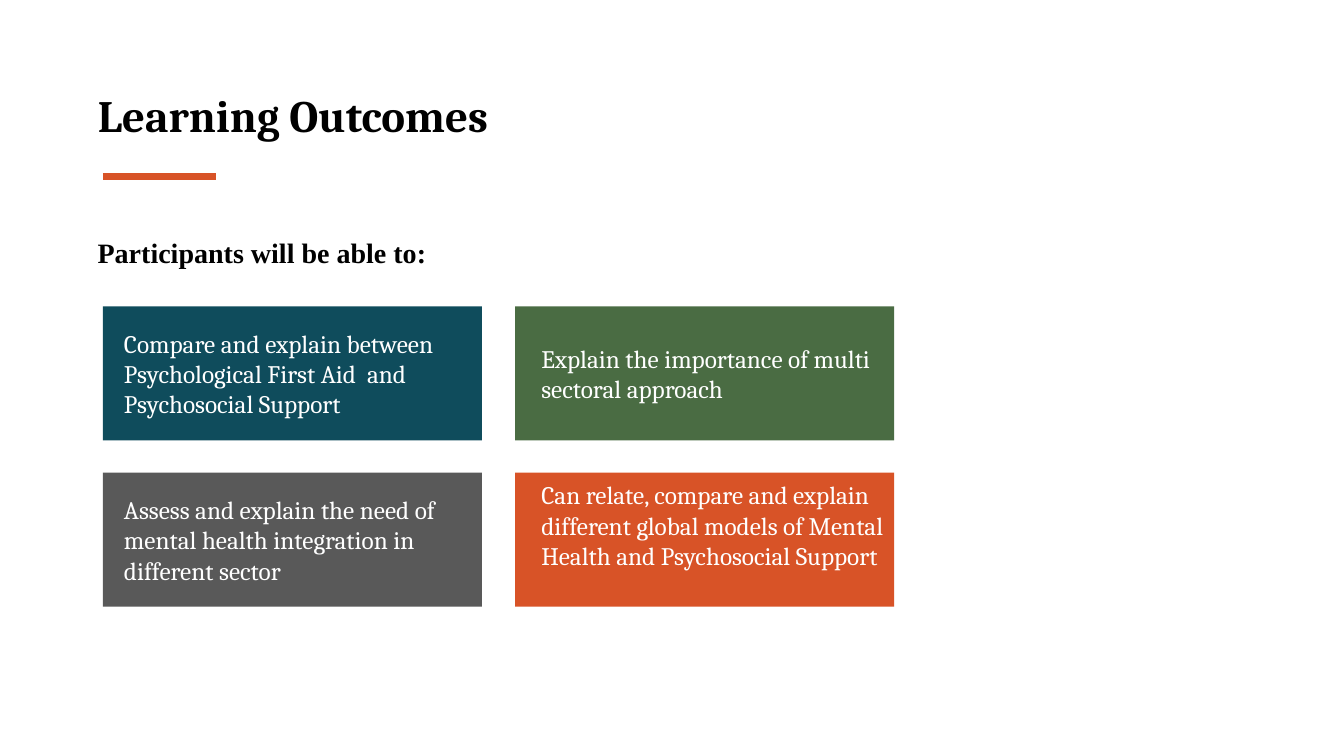
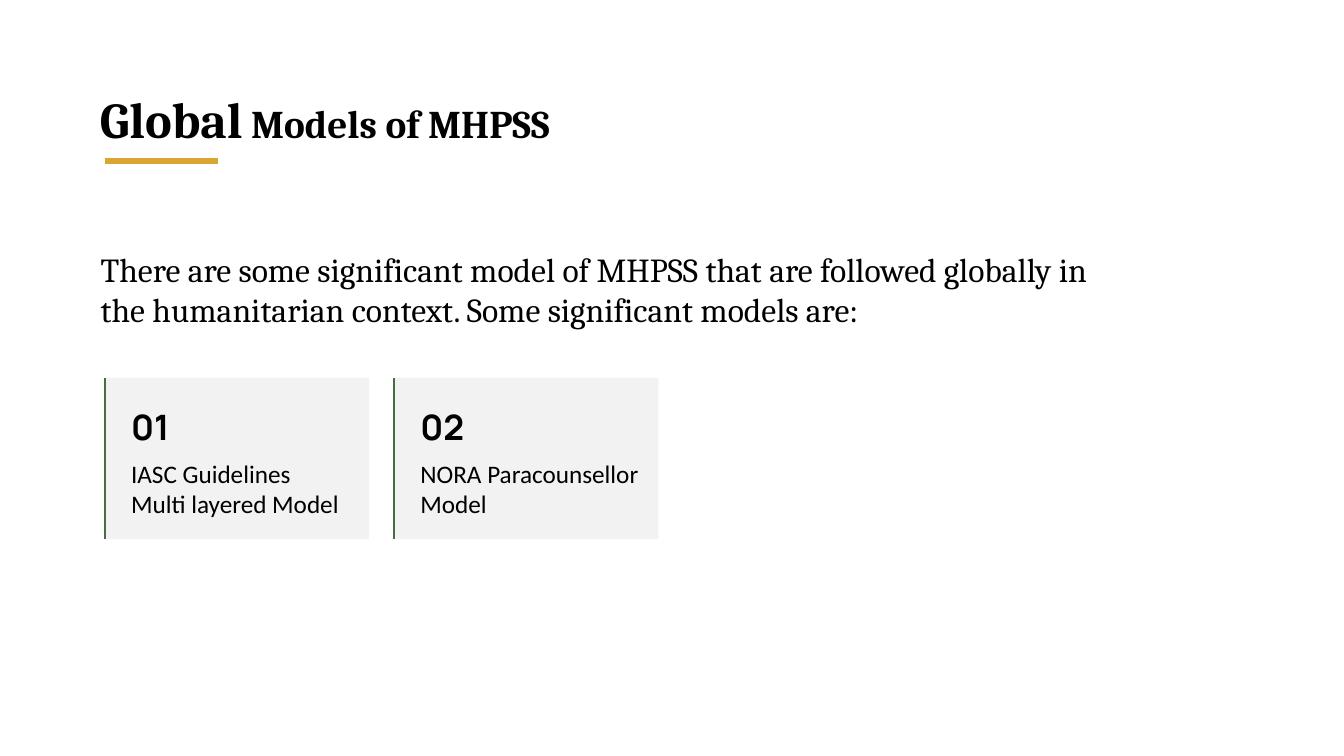
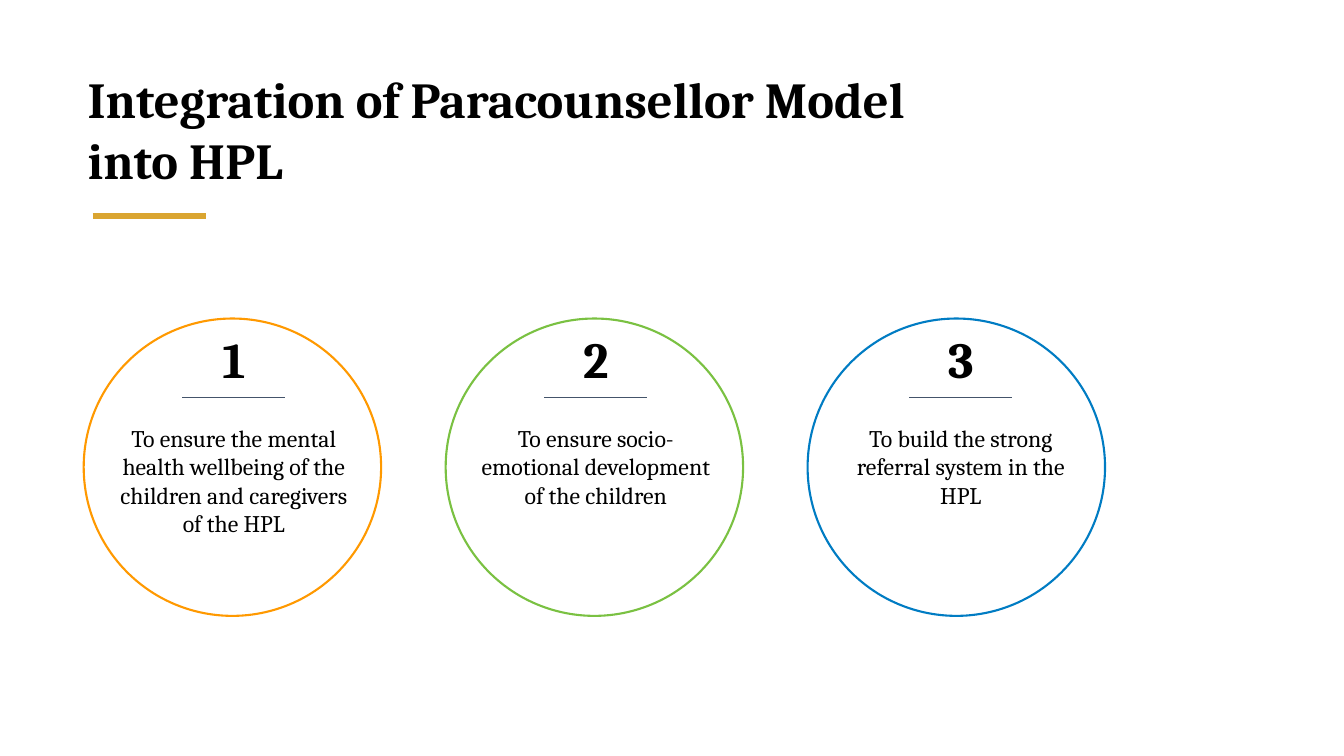
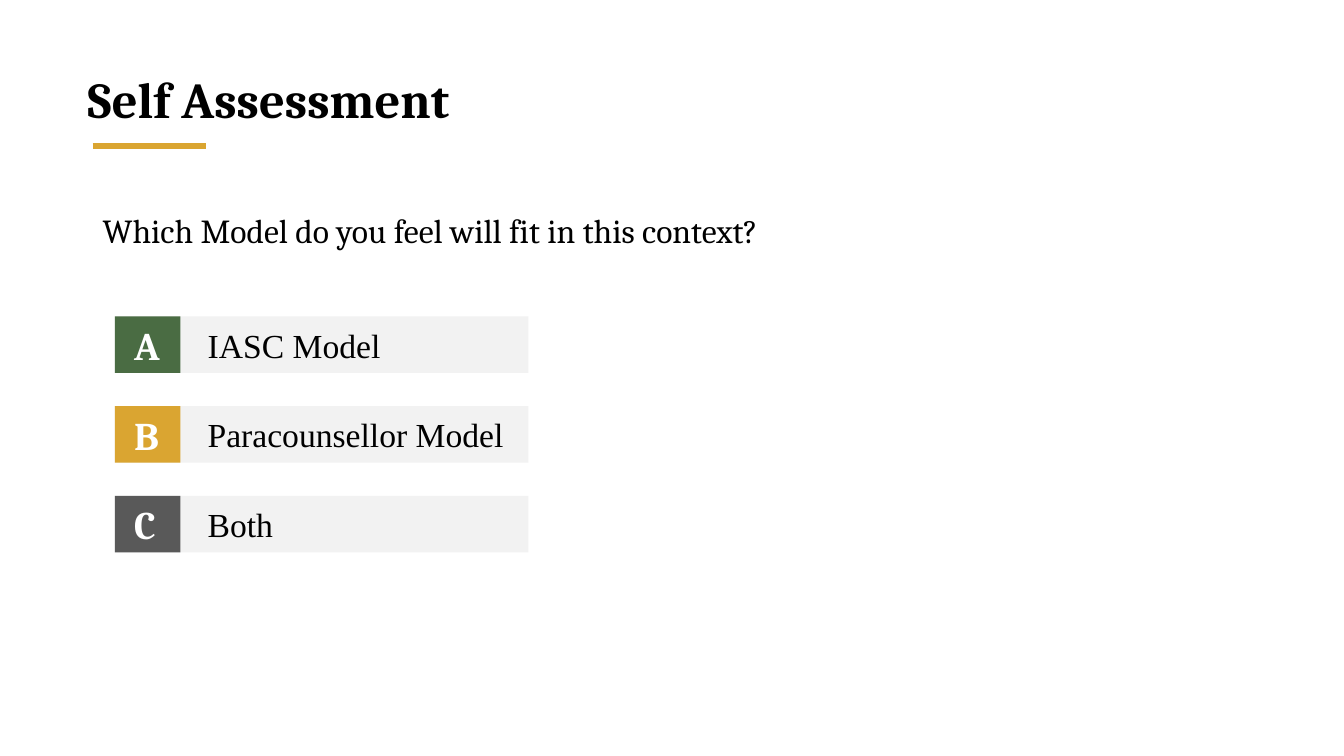
from lxml import etree
from pptx import Presentation
from pptx.dml.color import RGBColor
from pptx.enum.shapes import MSO_CONNECTOR, MSO_SHAPE
from pptx.enum.text import MSO_ANCHOR, MSO_AUTO_SIZE, PP_ALIGN
from pptx.oxml.ns import qn
from pptx.util import Inches, Pt

RECTANGLE, OVAL = MSO_SHAPE.RECTANGLE, MSO_SHAPE.OVAL
STRAIGHT = MSO_CONNECTOR.STRAIGHT
LINE = "line"
TOP, MIDDLE = MSO_ANCHOR.TOP, MSO_ANCHOR.MIDDLE
LEFT, CENTER = PP_ALIGN.LEFT, PP_ALIGN.CENTER
NO_FIT = MSO_AUTO_SIZE.NONE
TITLE_ONLY = 5

COLORS = {
    name: RGBColor.from_string(value)
    for name, value in {
        "black": "000000", "white": "FFFFFF", "pale": "F2F2F2", "gray": "595959",
        "teal": "0F4C5C", "green": "4A6C43", "rust": "D85327", "gold": "DAA531",
        "slate": "44546A", "orange": "FF9900", "lime": "7AC142", "blue": "007CC3",
    }.items()
}

STYLES = {
    "title": {"name": "Cambria", "size": Pt(36), "bold": True},
    "title_32": {"name": "Cambria", "size": Pt(32), "bold": True},
    "title_28": {"name": "Cambria", "size": Pt(28), "bold": True},
    "lead": {"name": "Cambria", "size": Pt(24), "bold": False},
    "subhead": {"name": "Times New Roman", "size": Pt(20), "bold": True},
    "outcome": {"name": "Cambria", "size": Pt(18), "bold": False},
    "card_number": {"name": "Manrope", "size": Pt(25), "bold": True},
    "card": {"name": "Calibri", "size": Pt(18), "bold": False},
    "goal": {"name": "Cambria", "size": Pt(17), "bold": False},
    "option": {"name": "Times New Roman", "size": Pt(24), "bold": False},
}


def write(shape, paragraphs, color="black", align=LEFT, anchor=TOP,
          insets=(0.1, 0.05, 0.1, 0.05), gap=0):
    """Fill a shape with paragraphs, each a list of (text, style name) runs."""
    frame = shape.text_frame
    frame.word_wrap = True
    frame.auto_size = NO_FIT
    frame.vertical_anchor = anchor
    for side, inset in zip(("left", "top", "right", "bottom"), insets):
        setattr(frame, f"margin_{side}", Inches(inset))
    for index, runs in enumerate(paragraphs):
        para = frame.add_paragraph() if index else frame.paragraphs[0]
        para.alignment = align
        if index:
            para.space_before = Pt(gap)
        for text, style in runs:
            span = para.add_run()
            span.text = text
            span.font.color.rgb = COLORS[color]
            for attribute, value in STYLES[style].items():
                setattr(span.font, attribute, value)


def draw(page, kind, left, top, width, height, fill=None, line=None, weight=1.5):
    """Add a flat preset shape or a straight line."""
    if kind == LINE:
        item = page.shapes.add_connector(STRAIGHT, Inches(left), Inches(top),
                                         Inches(left + width), Inches(top + height))
        etree.SubElement(item._element.spPr, qn("a:effectLst"))
    else:
        item = page.shapes.add_shape(kind, Inches(left), Inches(top),
                                     Inches(width), Inches(height))
        item.shadow.inherit = False
        if fill:
            item.fill.solid()
            item.fill.fore_color.rgb = COLORS[fill]
        else:
            item.fill.background()
    if line:
        item.line.color.rgb = COLORS[line]
        item.line.width = Pt(weight)
    else:
        item.line.fill.background()
    return item


deck = Presentation()
deck.slide_width, deck.slide_height = Inches(13.33), Inches(7.5)

# Titles and accent bars: runs, title box, accent left, accent top, accent colour
headings = [
    ([("Learning Outcomes", "title_32")], (0.87, 0.82, 6.67, 0.64), 1.02, 1.75, "rust"),
    ([("Global", "title"), (" Models of MHPSS", "title_28")],
     (0.89, 0.82, 9.03, 0.71), 1.04, 1.6, "gold"),
    ([("Integration of Paracounsellor Model into HPL", "title")],
     (0.77, 0.63, 9.23, 1.31), 0.92, 2.14, "gold"),
    ([("Self Assessment", "title")], (0.77, 0.63, 11.74, 0.71), 0.92, 1.45, "gold"),
]
pages = []
for runs, place, accent_left, accent_top, accent_color in headings:
    page = deck.slides.add_slide(deck.slide_layouts[TITLE_ONLY])
    title = page.shapes.title
    title.left, title.top, title.width, title.height = map(Inches, place)
    write(title, [runs])
    draw(page, LINE, accent_left, accent_top, 1.12, 0, line=accent_color, weight=4.5)
    pages.append(page)
outcomes_page, models_page, goals_page, quiz_page = pages

# Lead sentences under the titles
leads = [
    (outcomes_page, "Participants will be able to:", "subhead", (0.87, 2.29, 6.67, 0.44)),
    (models_page, "There are some significant model of MHPSS that are followed globally in "
     "the humanitarian context. Some significant models are:", "lead",
     (0.9, 2.42, 10.44, 0.91)),
    (quiz_page, "Which Model do you feel will fit in this context?", "lead",
     (0.92, 2.03, 7.32, 0.5)),
]
for page, text, style, place in leads:
    write(page.shapes.add_textbox(*map(Inches, place)), [[(text, style)]])

# Learning outcomes: two by two grid
outcomes = [
    ("Compare and explain between Psychological First Aid  and Psychosocial Support",
     "teal", MIDDLE),
    ("Explain the importance of multi sectoral approach", "green", MIDDLE),
    ("Assess and explain the need of mental health integration in different sector",
     "gray", MIDDLE),
    ("Can relate, compare and explain different global models of Mental Health and "
     "Psychosocial Support", "rust", TOP),
]
for index, (text, fill, anchor) in enumerate(outcomes):
    row, column = divmod(index, 2)
    box = draw(outcomes_page, RECTANGLE, 1.02 + 4.09 * column, 3.04 + 1.65 * row,
               3.76, 1.33, fill)
    write(box, [[(text, "outcome")]], "white", anchor=anchor,
          insets=(0.21 + 0.05 * column, 0.07, 0.09, 0.07))

# Global models: numbered cards
models = ["IASC Guidelines Multi layered Model", "NORA Paracounsellor Model"]
for index, text in enumerate(models):
    left = 1.04 + 2.87 * index
    card = draw(models_page, RECTANGLE, left, 3.75, 2.62, 1.6, "pale")
    write(card, [[(f"{index + 1:02}", "card_number")], [(text, "card")]],
          insets=(0.26, 0.27, 0.18, 0.05), gap=8)
    draw(models_page, LINE, left, 3.75, 0, 1.6, line="green")

# Integration goals: numbered circles; the last one's content sits slightly right
goals = [
    ("To ensure the mental health wellbeing of the children and caregivers of the HPL",
     "orange", 0),
    ("To ensure socio-emotional development of the children", "lime", 0),
    ("To build the strong referral system in the HPL", "blue", 0.03),
]
for index, (text, color, shift) in enumerate(goals):
    left = 0.83 + 3.59 * index
    draw(goals_page, OVAL, left, 3.16, 2.95, 2.95, line=color)
    text_left = left + 0.22 + shift
    for content, style, top, height in [(str(index + 1), "title", 3.16, 0.81),
                                        (text, "goal", 4.1, 1.35)]:
        box = goals_page.shapes.add_textbox(Inches(text_left), Inches(top),
                                            Inches(2.54), Inches(height))
        write(box, [[(content, style)]], align=CENTER, insets=(0.1,) * 4)
    draw(goals_page, LINE, text_left + 0.76, 3.94, 1.02, 0, line="slate", weight=0.75)

# Self assessment: lettered options
options = [("A", "IASC Model", "green"), ("B", "Paracounsellor Model", "gold"),
           ("C", "Both", "gray")]
for index, (letter, text, fill) in enumerate(options):
    top = 3.14 + 0.89 * index
    bar = draw(quiz_page, RECTANGLE, 1.14, top, 4.1, 0.56, "pale")
    write(bar, [[(text, "option")]], anchor=MIDDLE, insets=(0.92, 0, 0.1, 0))
    tile = draw(quiz_page, RECTANGLE, 1.14, top, 0.65, 0.56, fill)
    write(tile, [[(letter, "title_28")]], "white", anchor=MIDDLE, insets=(0.19, 0, 0.1, 0))

deck.save("out.pptx")
